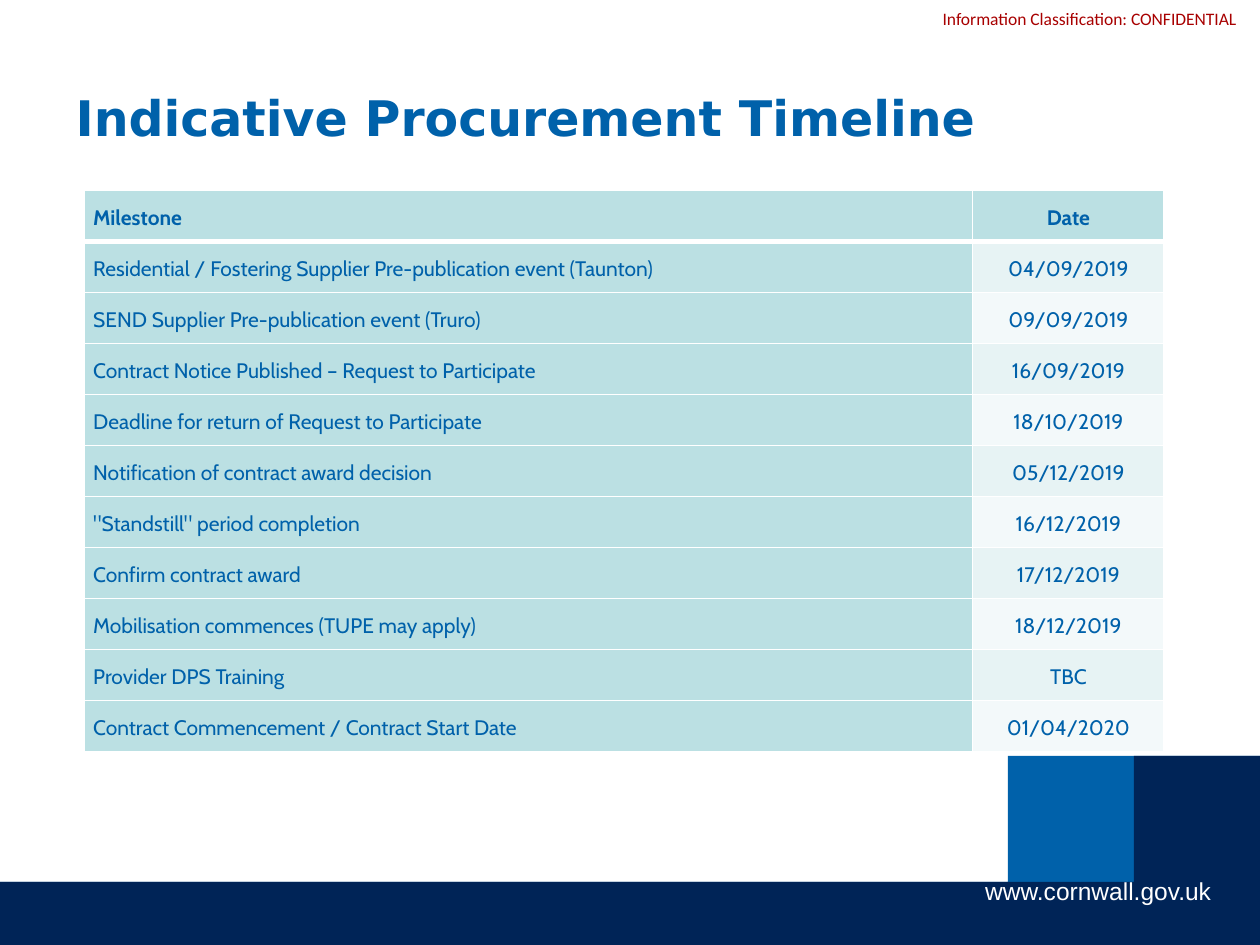
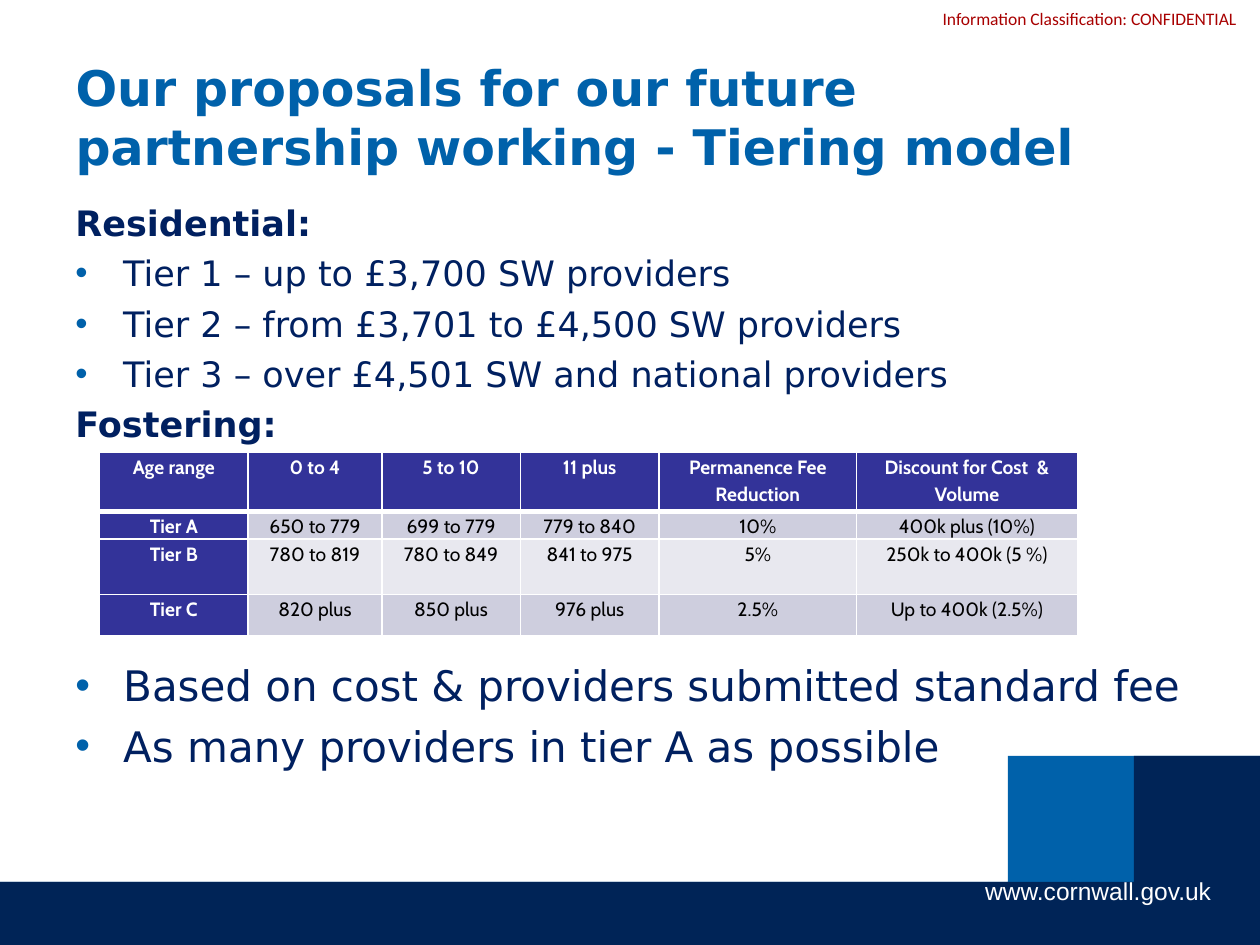
from lxml.etree import SubElement
from pptx import Presentation
from pptx.dml.color import RGBColor
from pptx.enum.text import MSO_ANCHOR, PP_ALIGN
from pptx.oxml.ns import qn
from pptx.util import Inches, Pt

# Content
WEB_ADDRESS = "www.cornwall.gov.uk"
CLASSIFICATION = "Information Classification: CONFIDENTIAL"

TIMELINE_TITLE = "Indicative Procurement Timeline"
MILESTONES = [
    ("Milestone", "Date"),
    ("Residential / Fostering Supplier Pre-publication event (Taunton)", "04/09/2019"),
    ("SEND Supplier Pre-publication event (Truro)", "09/09/2019"),
    ("Contract Notice Published – Request to Participate", "16/09/2019"),
    ("Deadline for return of Request to Participate", "18/10/2019"),
    ("Notification of contract award decision", "05/12/2019"),
    ('"Standstill" period completion', "16/12/2019"),
    ("Confirm contract award", "17/12/2019"),
    ("Mobilisation commences (TUPE may apply)", "18/12/2019"),
    ("Provider DPS Training", "TBC"),
    ("Contract Commencement / Contract Start Date", "01/04/2020"),
]

TIERING_TITLE = "Our proposals for our future partnership working - Tiering model"
# Text, size, space before, is a heading; the long space leaves room for the table
TIERING_TEXT = [
    ("Residential:", 20, 0, True),
    ("Tier 1 – up to £3,700 SW providers", 20, 4.7, False),
    ("Tier 2 – from £3,701 to £4,500 SW providers", 20, 4.7, False),
    ("Tier 3 – over £4,501 SW and national providers", 20, 4.7, False),
    ("Fostering:", 20, 4.7, True),
    ("Based on cost & providers submitted standard fee", 24, 123, False),
    ("As many providers in tier A as possible", 24, 5.7, False),
]
FOSTERING_TIERS = [
    ("Age range", "0 to 4", "5 to 10", "11 plus", "Permanence Fee\nReduction",
     "Discount for Cost  & Volume"),
    ("Tier A", "650 to 779", "699 to 779", "779 to 840", "10%", "400k plus (10%)"),
    ("Tier B", "780 to 819", "780 to 849", "841 to 975", "5%", "250k to 400k (5 %)"),
    ("Tier C", "820 plus", "850 plus", "976 plus", "2.5%", "Up to 400k (2.5%)"),
]

# Shared style
COLOURS = {
    "blue": "0061AA", "navy": "002457", "text": "002060", "red": "A80000",
    "white": "FFFFFF", "black": "000000",
    "teal": "BBE0E3", "teal light": "E7F3F4", "teal pale": "F3F9FA",
    "indigo": "333399", "indigo light": "CECEDE", "indigo pale": "E8E8EF",
}
TITLE_FONT, TABLE_FONT = "DejaVu Sans", "Cabin"
SLIDE_WIDTH, SLIDE_HEIGHT = 10, 7.5

# Each band's upper edge: two Bezier curves from left to right
BANDS = [
    ("blue", [[(0, 6.84), (1.27, 7.03), (2.97, 7.08), (4.84, 6.94)],
              [(4.84, 6.94), (6.89, 6.79), (8.73, 6.43), (10, 5.99)]]),
    ("navy", [[(0, 6.92), (1.27, 7.1), (2.97, 7.15), (4.84, 7.02)],
              [(4.84, 7.02), (6.89, 6.88), (8.73, 6.55), (10, 6.15)]]),
]
CURVE_STEPS = 30


def rgb(name):
    return RGBColor.from_string(COLOURS[name])


def add_run(paragraph, text, size, font, colour, bold=False):
    run = paragraph.add_run()
    run.text = text
    run.font.size = Pt(size)
    run.font.name = font
    run.font.bold = bold
    run.font.color.rgb = rgb(colour)


def add_text_box(slide, left, top, width, height):
    shape = slide.shapes.add_textbox(*map(Inches, (left, top, width, height)))
    shape.text_frame.word_wrap = True
    return shape.text_frame


def curve_point(curve, t):
    weights = ((1 - t) ** 3, 3 * t * (1 - t) ** 2, 3 * t ** 2 * (1 - t), t ** 3)
    return tuple(sum(w * point[axis] for w, point in zip(weights, curve))
                 for axis in (0, 1))


def add_band(slide, colour, curves):
    edge = [curve_point(curve, step / CURVE_STEPS)
            for curve in curves for step in range(CURVE_STEPS + 1)]
    outline = edge + [(SLIDE_WIDTH, SLIDE_HEIGHT), (0, SLIDE_HEIGHT)]
    builder = slide.shapes.build_freeform(*outline[0], scale=Inches(1))
    builder.add_line_segments(outline[1:], close=True)
    band = builder.convert_to_shape()
    band.shadow.inherit = False
    band.fill.solid()
    band.fill.fore_color.rgb = rgb(colour)
    band.line.fill.background()


def add_titled_slide(presentation, title_text):
    slide = presentation.slides.add_slide(presentation.slide_layouts[5])
    for colour, curves in BANDS:
        add_band(slide, colour, curves)

    # Footer address and classification mark
    footer = add_text_box(slide, 7.72, 6.9, 2.05, 0.33)
    add_run(footer.paragraphs[0], WEB_ADDRESS, 14, "Arial", "white")
    mark = add_text_box(slide, 7.29, 0, 2.71, 0.29)
    mark.margin_left = mark.margin_top = mark.margin_bottom = 0
    mark.margin_right = Inches(0.19)
    mark.vertical_anchor = MSO_ANCHOR.MIDDLE
    mark.paragraphs[0].alignment = PP_ALIGN.RIGHT
    add_run(mark.paragraphs[0], CLASSIFICATION, 10, "Calibri", "red")

    # Title
    title = slide.shapes.title
    title.left, title.top, title.width, title.height = map(Inches, (0.5, 0.3, 9, 1.25))
    title.text_frame.vertical_anchor = MSO_ANCHOR.MIDDLE
    paragraph = title.text_frame.paragraphs[0]
    paragraph.alignment = PP_ALIGN.LEFT
    add_run(paragraph, title_text, 28, TITLE_FONT, "blue", True)
    return slide


def set_borders(cell, bottom_width):
    properties = cell._tc.get_or_add_tcPr()
    for side, width in (("L", 1), ("R", 1), ("T", 1), ("B", bottom_width)):
        line = SubElement(properties, qn(f"a:ln{side}"), w=str(Pt(width)))
        fill = SubElement(line, qn("a:solidFill"))
        SubElement(fill, qn("a:srgbClr"), val=COLOURS["white"])


def add_grid(slide, left, top, columns, rows, content, size, hue, head_colour,
             body_colour, bold_first_column=False, left_first_column=False,
             anchor=MSO_ANCHOR.TOP, spacing=0):
    """Table with a strong header row and first column, and banded values."""
    frame = slide.shapes.add_table(len(rows), len(columns), Inches(left), Inches(top),
                                   Inches(sum(columns)), Inches(sum(rows)))
    table = frame.table
    for column, width in zip(table.columns, columns):
        column.width = Inches(width)
    for row, height in zip(table.rows, rows):
        row.height = Inches(height)
    for row_index, values in enumerate(content):
        for column_index, value in enumerate(values):
            is_header, is_first = row_index == 0, column_index == 0
            strong = is_header or is_first
            cell = table.cell(row_index, column_index)
            cell.margin_left = cell.margin_right = Inches(0.07)
            cell.margin_top = cell.margin_bottom = 0
            cell.vertical_anchor = anchor
            set_borders(cell, 3 if is_header else 1)
            cell.fill.solid()
            shade = "" if strong else " light" if row_index % 2 else " pale"
            cell.fill.fore_color.rgb = rgb(hue + shade)
            for index, text in enumerate(value.split("\n")):
                text_frame = cell.text_frame
                paragraph = text_frame.add_paragraph() if index else text_frame.paragraphs[0]
                paragraph.alignment = (PP_ALIGN.LEFT if is_first and left_first_column
                                       else PP_ALIGN.CENTER)
                paragraph.line_spacing = 1.15
                paragraph.space_before = paragraph.space_after = Pt(spacing)
                add_run(paragraph, text, size, TABLE_FONT,
                        head_colour if strong else body_colour,
                        is_header or (is_first and bold_first_column))


def set_bullet(paragraph):
    properties = paragraph._p.get_or_add_pPr()
    properties.set("marL", str(Inches(0.38)))
    properties.set("indent", str(-Inches(0.38)))
    colour = SubElement(properties, qn("a:buClr"))
    SubElement(colour, qn("a:srgbClr"), val=COLOURS["blue"])
    SubElement(properties, qn("a:buFont"), typeface="Arial")
    SubElement(properties, qn("a:buChar"), char="•")


def build_timeline(presentation):
    slide = add_titled_slide(presentation, TIMELINE_TITLE)
    add_grid(slide, 0.67, 1.51, [7.05, 1.52], [4.46 / len(MILESTONES)] * len(MILESTONES),
             MILESTONES, 12, "teal", "blue", "blue", left_first_column=True,
             anchor=MSO_ANCHOR.MIDDLE, spacing=6)


def build_tiering(presentation):
    slide = add_titled_slide(presentation, TIERING_TITLE)
    body = add_text_box(slide, 0.5, 1.55, 9, 5.15)
    for index, (text, size, space_before, is_heading) in enumerate(TIERING_TEXT):
        paragraph = body.add_paragraph() if index else body.paragraphs[0]
        paragraph.space_before = Pt(space_before)
        if not is_heading:
            set_bullet(paragraph)
        add_run(paragraph, text, size, TITLE_FONT, "text", is_heading)
    add_grid(slide, 0.79, 3.59, [1.18, 1.06, 1.1, 1.1, 1.57, 1.75],
             [0.47, 0.22, 0.44, 0.33], FOSTERING_TIERS, 11, "indigo", "white", "black",
             bold_first_column=True)


def main():
    presentation = Presentation()
    presentation.slide_width = Inches(SLIDE_WIDTH)
    presentation.slide_height = Inches(SLIDE_HEIGHT)
    build_timeline(presentation)
    build_tiering(presentation)
    presentation.save("out.pptx")


if __name__ == "__main__":
    main()
